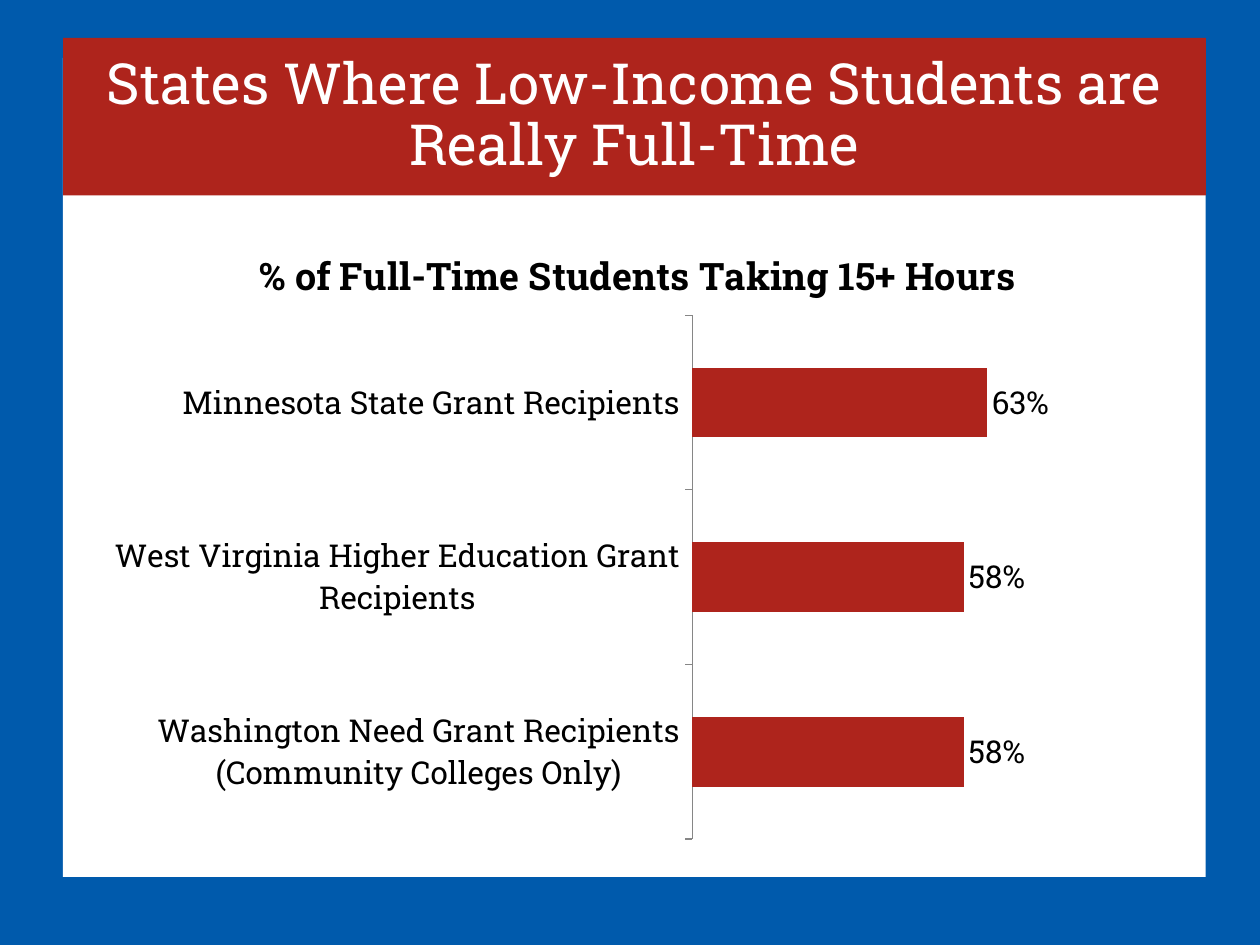
"""Build a slide with a bar chart of full-time grant recipients in three states."""
from lxml import etree
from pptx import Presentation
from pptx.chart.data import CategoryChartData
from pptx.dml.color import RGBColor
from pptx.enum.chart import XL_CHART_TYPE, XL_LABEL_POSITION, XL_TICK_LABEL_POSITION, XL_TICK_MARK
from pptx.enum.shapes import MSO_SHAPE
from pptx.enum.text import MSO_ANCHOR, PP_ALIGN
from pptx.oxml.ns import qn
from pptx.util import Inches, Pt

BAR_CLUSTERED = XL_CHART_TYPE.BAR_CLUSTERED
OUTSIDE_END = XL_LABEL_POSITION.OUTSIDE_END
LOW = XL_TICK_LABEL_POSITION.LOW
TICK_OUTSIDE, TICK_NONE = XL_TICK_MARK.OUTSIDE, XL_TICK_MARK.NONE
RECTANGLE = MSO_SHAPE.RECTANGLE
MIDDLE, CENTER = MSO_ANCHOR.MIDDLE, PP_ALIGN.CENTER

FONT = "Roboto Slab"
COLORS = {"blue": "005AAC", "red": "AE241C", "white": "FFFFFF", "black": "000000", "gray": "868686"}
RECIPIENTS = {
    "Washington Need Grant Recipients (Community Colleges Only)": 0.58,
    "West Virginia Higher Education Grant Recipients": 0.58,
    "Minnesota State Grant Recipients": 0.63,
}
PLOT_LAYOUT = {"x": 0.55, "y": 0.15, "w": 0.43, "h": 0.83}


def set_fill(fill, color):
    fill.solid()
    fill.fore_color.rgb = RGBColor.from_string(COLORS[color])


def set_font(font, size, color, bold=False):
    font.name, font.size, font.bold = FONT, Pt(size), bold
    font.color.rgb = RGBColor.from_string(COLORS[color])


presentation = Presentation()
presentation.slide_width, presentation.slide_height = Inches(10), Inches(7.5)
slide = presentation.slides.add_slide(presentation.slide_layouts[5])
set_fill(slide.background.fill, "blue")

title = slide.shapes.title
title.left, title.top, title.width, title.height = Inches(0.5), Inches(0.3), Inches(9.07), Inches(1.25)
set_fill(title.fill, "red")
title.text_frame.word_wrap = True
title.text_frame.vertical_anchor = MIDDLE
paragraph = title.text_frame.paragraphs[0]
paragraph.alignment = CENTER
paragraph.line_spacing = 0.9
run = paragraph.add_run()
run.text = "States Where Low-Income Students are Really Full-Time"
set_font(run.font, 32.4, "white")

panel = slide.shapes.add_shape(RECTANGLE, Inches(0.5), Inches(0.46), Inches(9.07), Inches(6.5))
panel.shadow.inherit = False
set_fill(panel.fill, "white")
panel.line.fill.background()
title.element.addprevious(panel.element)

chart_data = CategoryChartData(number_format="0%")
chart_data.categories = list(RECIPIENTS)
chart_data.add_series("Series 1", list(RECIPIENTS.values()))
chart = slide.shapes.add_chart(
    BAR_CLUSTERED, Inches(0.75), Inches(1.75), Inches(8.63), Inches(5.01), chart_data
).chart
set_font(chart.font, 18, "black")
chart.has_legend = False
chart.has_title = True
chart.chart_title.include_in_layout = False
run = chart.chart_title.text_frame.paragraphs[0].add_run()
run.text = "% of Full-Time Students Taking 15+ Hours"
set_font(run.font, 21.6, "black", bold=True)

category_axis = chart.category_axis
category_axis.major_tick_mark = TICK_OUTSIDE
category_axis.minor_tick_mark = TICK_NONE
category_axis.tick_label_position = LOW
category_axis.format.line.color.rgb = RGBColor.from_string(COLORS["gray"])
category_axis.format.line.width = Pt(0.75)

value_axis = chart.value_axis
value_axis.minimum_scale, value_axis.maximum_scale = 0, 1
value_axis.has_major_gridlines = False
value_axis.visible = False
value_axis.tick_labels.number_format = "0%"
value_axis.tick_labels.number_format_is_linked = False

plot = chart.plots[0]
plot.gap_width = 150
plot.vary_by_categories = False
set_fill(plot.series[0].format.fill, "red")
labels = plot.series[0].data_labels
labels.show_value = True
labels.number_format = "0%"
labels.number_format_is_linked = False
labels.position = OUTSIDE_END
set_font(labels.font, 18, "black")

plot_area = chart.element.find(".//" + qn("c:plotArea"))
layout = plot_area.find(qn("c:layout"))
if layout is None:
    layout = etree.Element(qn("c:layout"))
    plot_area.insert(0, layout)
manual_layout = etree.SubElement(layout, qn("c:manualLayout"))
settings = {"layoutTarget": "inner", "xMode": "edge", "yMode": "edge", **PLOT_LAYOUT}
for name, value in settings.items():
    etree.SubElement(manual_layout, qn(f"c:{name}")).set("val", str(value))

presentation.save("out.pptx")
